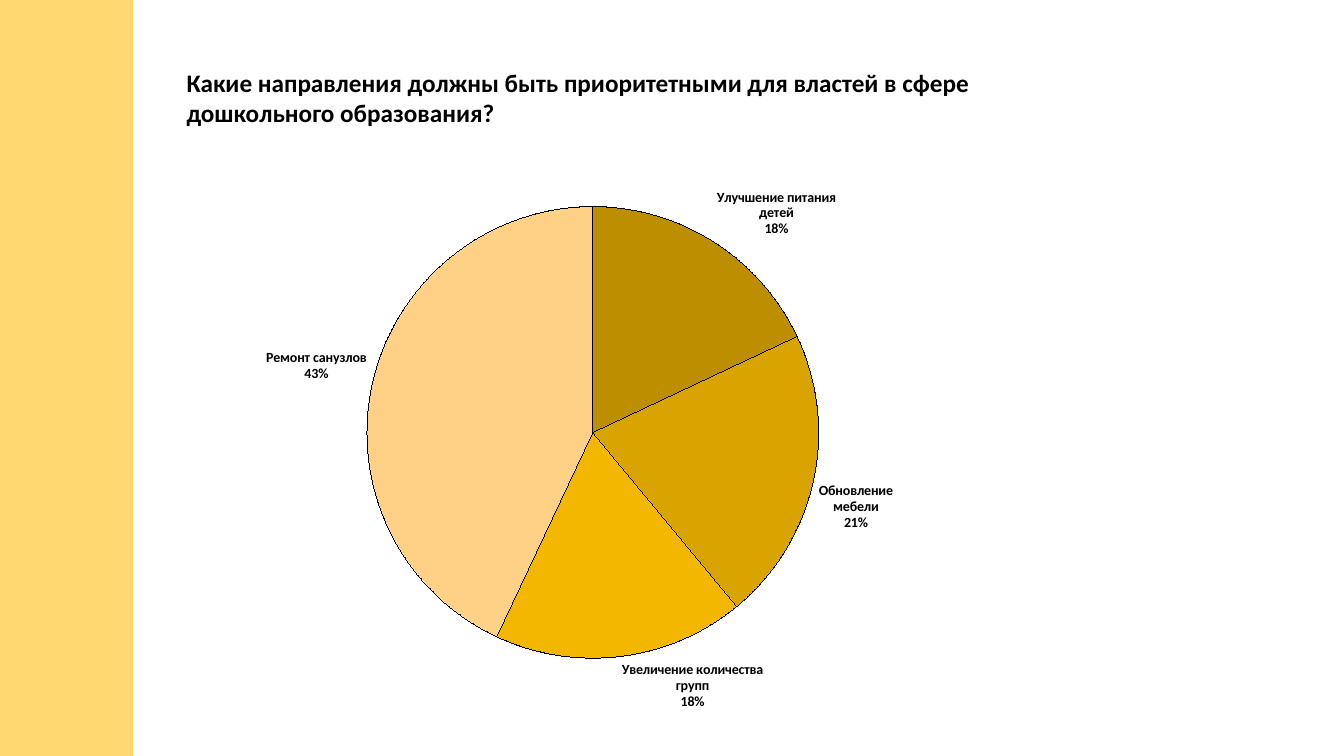
from lxml import etree
from pptx import Presentation
from pptx.chart.data import CategoryChartData
from pptx.dml.color import RGBColor
from pptx.enum.chart import XL_CHART_TYPE as ChartType, XL_LABEL_POSITION as LabelPosition
from pptx.enum.shapes import MSO_SHAPE as Shape
from pptx.enum.text import MSO_ANCHOR as Anchor, MSO_AUTO_SIZE as AutoSize, PP_ALIGN as Align
from pptx.oxml.ns import qn
from pptx.util import Inches, Pt

BLACK = RGBColor(0x00, 0x00, 0x00)
SAND = RGBColor(0xFF, 0xD9, 0x6F)
FONT = "Calibri"
QUESTION = (
    "Какие направления должны быть приоритетными для властей "
    "в сфере дошкольного образования?"
)
PRIORITIES = [
    ("Улучшение питания детей", 18, RGBColor(0xBD, 0x8E, 0x00)),
    ("Обновление\nмебели", 21, RGBColor(0xDA, 0xA4, 0x00)),
    ("Увеличение количества групп", 18, RGBColor(0xF4, 0xB7, 0x00)),
    ("Ремонт санузлов", 43, RGBColor(0xFF, 0xD1, 0x87)),
]
CHART_BOX = (1.88, 1.58, 7.74, 5.62)
PIE_CENTER = (5.88, 4.29)
PIE_RADIUS = 2.24


def style_font(font, size, bold):
    """Apply the common typeface and colour."""
    font.name = FONT
    font.size = Pt(size)
    font.bold = bold
    font.color.rgb = BLACK


def add_sidebar(slide, height):
    """Draw the coloured band on the left edge."""
    sidebar = slide.shapes.add_shape(Shape.RECTANGLE, 0, 0, Inches(1.32), height)
    sidebar.shadow.inherit = False
    sidebar.fill.solid()
    sidebar.fill.fore_color.rgb = SAND
    sidebar.line.fill.background()


def set_question(slide):
    """Place the survey question in the title."""
    title = slide.shapes.title
    title.left, title.top = Inches(1.75), Inches(0.62)
    title.width, title.height = Inches(9.17), Inches(0.71)
    frame = title.text_frame
    frame.word_wrap = True
    frame.auto_size = AutoSize.SHAPE_TO_FIT_TEXT
    frame.vertical_anchor = Anchor.TOP
    paragraph = frame.paragraphs[0]
    paragraph.alignment = Align.LEFT
    run = paragraph.add_run()
    run.text = QUESTION
    style_font(run.font, 18, True)


def place_pie(chart):
    """Fix the pie's centre and radius inside the chart frame."""
    left, top, width, height = CHART_BOX
    plot_area = chart.plots[0]._element.getparent()
    layout = plot_area.find(qn("c:layout"))
    if layout is None:
        layout = etree.Element(qn("c:layout"))
        plot_area.insert(0, layout)
    manual = etree.SubElement(layout, qn("c:manualLayout"))
    settings = {
        "layoutTarget": "inner",
        "xMode": "edge",
        "yMode": "edge",
        "x": (PIE_CENTER[0] - PIE_RADIUS - left) / width,
        "y": (PIE_CENTER[1] - PIE_RADIUS - top) / height,
        "w": 2 * PIE_RADIUS / width,
        "h": 2 * PIE_RADIUS / height,
    }
    for tag, value in settings.items():
        etree.SubElement(manual, qn(f"c:{tag}")).set("val", str(value))


def add_priorities_pie(slide):
    """Add the pie of answers with outside labels."""
    answers = CategoryChartData()
    answers.categories = [name for name, _, _ in PRIORITIES]
    answers.add_series("Series 1", [share for _, share, _ in PRIORITIES])
    box = [Inches(length) for length in CHART_BOX]
    chart = slide.shapes.add_chart(ChartType.PIE, *box, answers).chart
    chart.has_legend = False
    chart.has_title = False
    style_font(chart.font, 10, False)

    pie = chart.plots[0]
    pie.vary_by_categories = True
    for index, (_, _, color) in enumerate(PRIORITIES):
        slice_format = pie.series[0].points[index].format
        slice_format.fill.solid()
        slice_format.fill.fore_color.rgb = color
        slice_format.line.color.rgb = BLACK

    pie.has_data_labels = True
    labels = pie.data_labels
    labels.show_category_name = True
    labels.show_percentage = True
    labels.show_value = False
    labels.number_format = "0%"
    labels.number_format_is_linked = False
    labels.position = LabelPosition.OUTSIDE_END
    style_font(labels.font, 10, True)
    separator = etree.Element(qn("c:separator"))
    separator.text = "\n"
    labels._element.find(qn("c:showBubbleSize")).addnext(separator)
    place_pie(chart)


def main():
    """Build the survey slide."""
    deck = Presentation()
    deck.slide_width, deck.slide_height = Inches(13.33), Inches(7.5)
    slide = deck.slides.add_slide(deck.slide_layouts[5])
    add_sidebar(slide, deck.slide_height)
    set_question(slide)
    add_priorities_pie(slide)
    deck.save("out.pptx")


if __name__ == "__main__":
    main()
